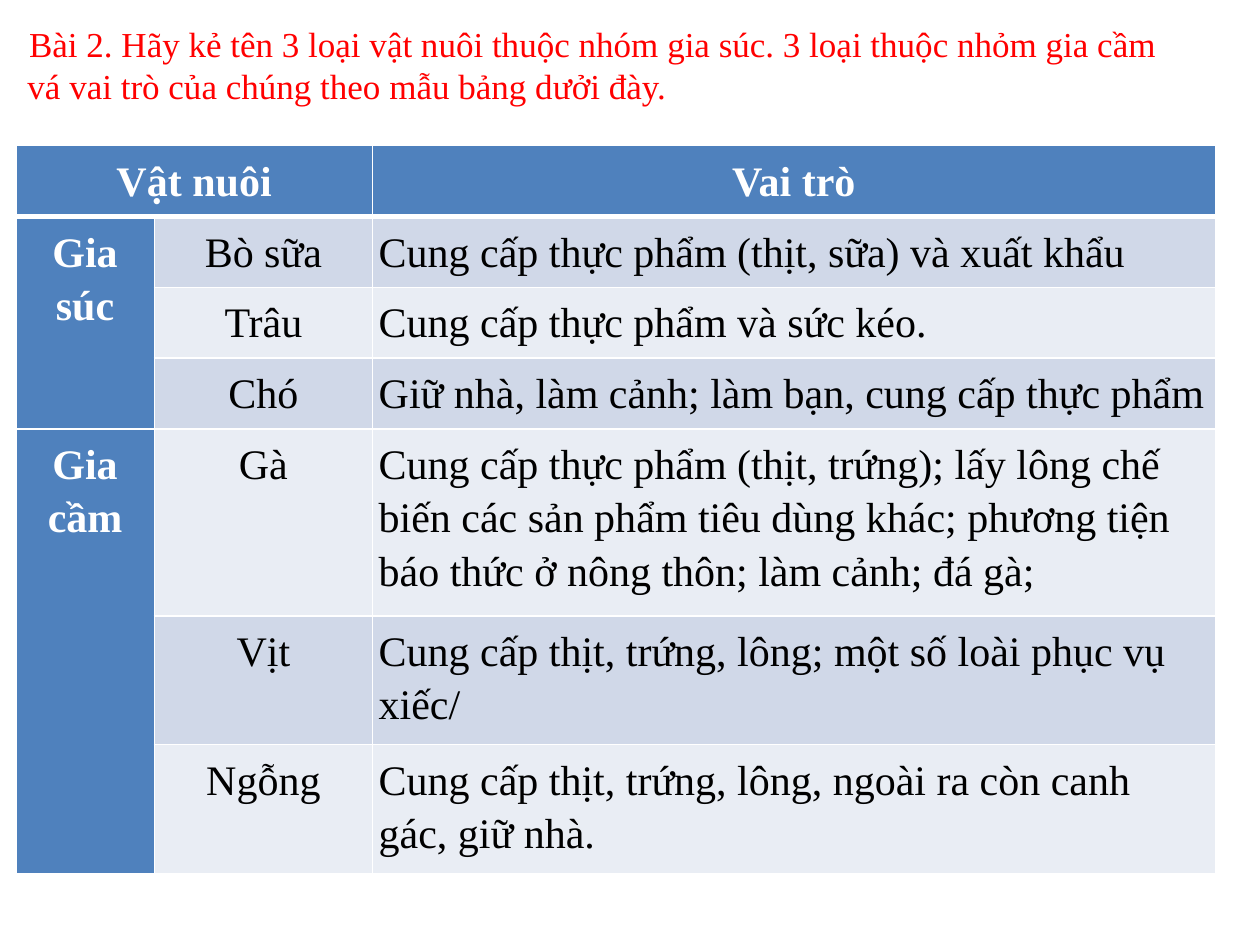
from lxml.etree import SubElement
from pptx import Presentation
from pptx.dml.color import RGBColor
from pptx.enum.shapes import MSO_SHAPE
from pptx.enum.text import MSO_ANCHOR, PP_ALIGN
from pptx.oxml.ns import qn
from pptx.util import Pt

COLORS = {
    "white": "FFFFFF",
    "black": "000000",
    "red": "FF0000",
    "header": "4F81BD",
    "odd": "D0D8E8",
    "even": "E9EDF4",
}

HEADERS = ("Vật nuôi", "Vai trò")
GROUPS = {
    "Gia súc": [
        ("Bò sữa", "Cung cấp thực phẩm (thịt, sữa) và xuất khẩu"),
        ("Trâu", "Cung cấp thực phẩm và sức kéo."),
        ("Chó", "Giữ nhà, làm cảnh; làm bạn, cung cấp thực phẩm"),
    ],
    "Gia cầm": [
        ("Gà", "Cung cấp thực phẩm (thịt, trứng); lấy lông chế biến các sản phẩm "
               "tiêu dùng khác; phương tiện báo thức ở nông thôn; làm cảnh; đá gà;"),
        ("Vịt", "Cung cấp thịt, trứng, lông; một số loài phục vụ xiếc/"),
        ("Ngỗng", "Cung cấp thịt, trứng, lông, ngoài ra còn canh gác, giữ nhà."),
    ],
}
COLUMN_WIDTHS = (79.2, 124.6, 481.7)
ROW_HEIGHTS = (40.5, 40.5, 40.5, 40.5, 106.8, 73.7, 73.7)


def color(name):
    return RGBColor.from_string(COLORS[name])


def write(frame, text, size=24, ink="black", bold=False,
          align=PP_ALIGN.LEFT, spacing=None):
    """Put one formatted paragraph in a text frame and return it."""
    para = frame.paragraphs[0]
    para.alignment = align
    if spacing:
        para.line_spacing = spacing
    span = para.add_run()
    span.text = text
    span.font.name = "Times New Roman"
    span.font.size = Pt(size)
    span.font.bold = bold
    span.font.color.rgb = color(ink)
    return para


class PageBuilder:
    """Holds the table style and the current slide."""

    cell_margin = 3.6
    line_spacing = 1.15
    border_width = 1
    header_border_width = 3

    def __init__(self, page):
        self.page = page

    def title(self, text, left, top, width, height):
        box = self.page.shapes.add_shape(
            MSO_SHAPE.RECTANGLE, Pt(left), Pt(top), Pt(width), Pt(height))
        box.shadow.inherit = False
        box.fill.solid()
        box.fill.fore_color.rgb = color("white")
        box.line.fill.background()
        frame = box.text_frame
        frame.word_wrap = True
        frame.vertical_anchor = MSO_ANCHOR.MIDDLE
        para = write(frame, text, size=20, ink="red")
        para._p.get_or_add_pPr().set("indent", str(Pt(0.9)))

    def table(self, left, top, widths, heights):
        table = self.page.shapes.add_table(
            len(heights), len(widths), Pt(left), Pt(top),
            Pt(sum(widths)), Pt(sum(heights))).table
        for column, width in zip(table.columns, widths):
            column.width = Pt(width)
        for row, height in zip(table.rows, heights):
            row.height = Pt(height)
        return table

    def borders(self, cell, top, bottom):
        props = cell._tc.get_or_add_tcPr()
        side = self.border_width
        edges = {"a:lnL": side, "a:lnR": side, "a:lnT": top, "a:lnB": bottom}
        for position, (tag, width) in enumerate(edges.items()):
            line = SubElement(props, qn(tag), w=str(Pt(width)))
            fill = SubElement(line, qn("a:solidFill"))
            SubElement(fill, qn("a:srgbClr"), val=COLORS["white"])
            props.insert(position, line)  # borders come before the fill

    def cell(self, cell, fill, text="", **style):
        cell.margin_left = cell.margin_right = Pt(self.cell_margin)
        cell.margin_top = cell.margin_bottom = Pt(self.cell_margin)
        cell.fill.solid()
        cell.fill.fore_color.rgb = color(fill)
        if text:
            write(cell.text_frame, text, spacing=self.line_spacing, **style)


def main():
    deck = Presentation()
    deck.slide_width, deck.slide_height = Pt(720), Pt(540)
    builder = PageBuilder(deck.slides.add_slide(deck.slide_layouts[6]))

    # Question
    builder.title(
        "Bài 2. Hãy kẻ tên 3 loại vật nuôi thuộc nhóm gia súc. 3 loại thuộc "
        "nhỏm gia cầm vá vai trò của chúng theo mẫu bảng dưởi đày.",
        8.64, 9.4, 674.6, 55.4)

    # Table grid and borders
    table = builder.table(9, 83.2, COLUMN_WIDTHS, ROW_HEIGHTS)
    thin, thick = builder.border_width, builder.header_border_width
    for row in range(len(ROW_HEIGHTS)):
        for column in range(len(COLUMN_WIDTHS)):
            builder.borders(table.cell(row, column),
                            top=thick if row == 1 else thin,
                            bottom=thick if row == 0 else thin)

    # Header row
    heading = {"ink": "white", "bold": True, "align": PP_ALIGN.CENTER}
    table.cell(0, 0).merge(table.cell(0, 1))
    for column, text in zip((0, 2), HEADERS):
        builder.cell(table.cell(0, column), "header", text, **heading)

    # Animal groups with banded rows
    row = 1
    for group, animals in GROUPS.items():
        first = table.cell(row, 0)
        first.merge(table.cell(row + len(animals) - 1, 0))
        builder.cell(first, "header", group, **heading)
        for animal, role in animals:
            band = "odd" if row % 2 else "even"
            builder.cell(table.cell(row, 1), band, animal, align=PP_ALIGN.CENTER)
            builder.cell(table.cell(row, 2), band, role)
            row += 1

    deck.save("out.pptx")


if __name__ == "__main__":
    main()
